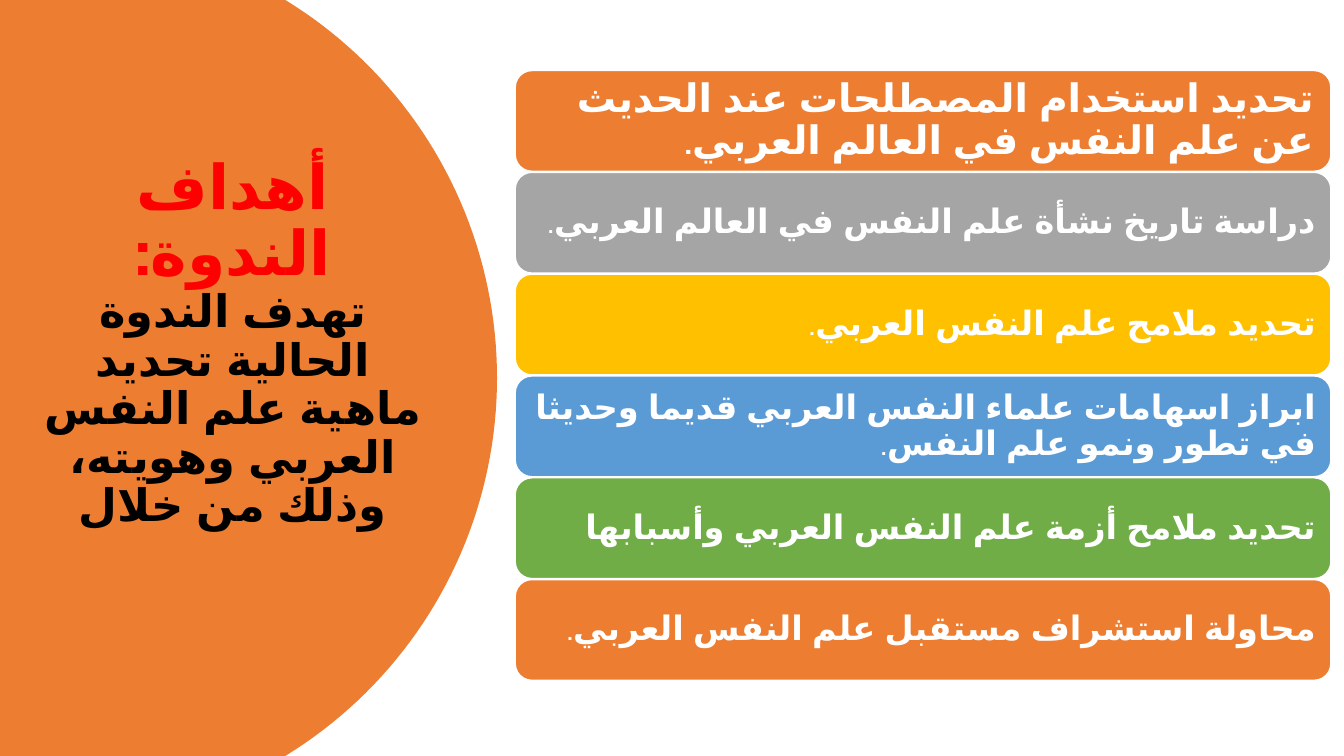
from math import asin, cos, sin

from pptx import Presentation
from pptx.dml.color import RGBColor
from pptx.enum.lang import MSO_LANGUAGE_ID as Language
from pptx.enum.shapes import MSO_SHAPE as Shape
from pptx.enum.text import MSO_ANCHOR as Anchor, MSO_AUTO_SIZE as AutoSize, PP_ALIGN as Align
from pptx.util import Inches, Pt

HEADING = "أهداف الندوة:"
INTRO = "تهدف الندوة الحالية تحديد ماهية علم النفس العربي وهويته، وذلك من خلال"
# goal, closing mark, bar colour
GOALS = [
    ("تحديد استخدام المصطلحات عند الحديث عن علم النفس في العالم العربي", ".", "orange"),
    ("دراسة تاريخ نشأة علم النفس في العالم العربي", ".", "grey"),
    ("تحديد ملامح علم النفس العربي", ".", "gold"),
    ("ابراز اسهامات علماء النفس العربي قديما وحديثا في تطور ونمو علم النفس", ".", "blue"),
    ("تحديد ملامح أزمة علم النفس العربي وأسبابها", "", "green"),
    ("محاولة استشراف مستقبل علم النفس العربي", ".", "orange"),
]


class Theme:
    font = "Calibri"
    colours = {
        "orange": "ED7D31", "grey": "A5A5A5", "gold": "FFC000", "blue": "5B9BD5",
        "green": "70AD47", "white": "FFFFFF", "red": "FF0000", "black": "000000",
    }
    heading, intro, lead_goal, goal, mark = 44, 32, 28, 24, 20

    @classmethod
    def rgb(cls, name):
        return RGBColor.from_string(cls.colours[name])


WIDTH, HEIGHT = 13.33, 7.5
PANEL_EDGE, PANEL_TOP = 4.93, 2.83  # reach of the arc at mid-height and at the slide's edges
ARC_STEPS = 80
BARS_LEFT, BARS_TOP, BAR_WIDTH, BAR_HEIGHT, BAR_PITCH = 5.11, 0.7, 8.09, 1, 1.01


def format_frame(frame, margins):
    values = {"word_wrap": True, "auto_size": AutoSize.NONE, "vertical_anchor": Anchor.MIDDLE}
    for name, value in values.items():
        setattr(frame, name, value)
    for side, margin in zip(("left", "top", "right", "bottom"), margins):
        setattr(frame, f"margin_{side}", Inches(margin))


def start_rtl(frame, alignment):
    paragraph = frame.paragraphs[0]
    paragraph.alignment = alignment
    paragraph.line_spacing = 0.9
    paragraph._p.get_or_add_pPr().set("rtl", "1")
    return paragraph


def add_run(paragraph, words, size, colour, bold=True):
    run = paragraph.add_run()
    run.text = words
    values = {"size": Pt(size), "bold": bold, "name": Theme.font,
              "language_id": Language.ARABIC}
    for name, value in values.items():
        setattr(run.font, name, value)
    run.font.color.rgb = Theme.rgb(colour)


def add_panel(slide):
    """Draw the part of a large disc that shows at the slide's left side."""
    half, reach = HEIGHT / 2, PANEL_EDGE - PANEL_TOP
    radius = (reach ** 2 + half ** 2) / (2 * reach)
    centre, swing = PANEL_EDGE - radius, asin(half / radius)
    angles = [swing * (2 * step / ARC_STEPS - 1) for step in range(ARC_STEPS + 1)]
    arc = [(Inches(centre + radius * cos(a)), Inches(half + radius * sin(a))) for a in angles]
    builder = slide.shapes.build_freeform(0, 0)
    builder.add_line_segments(arc + [(0, Inches(HEIGHT))], close=True)
    panel = builder.convert_to_shape()
    panel.shadow.inherit = False
    panel.fill.solid()
    panel.fill.fore_color.rgb = Theme.rgb("orange")
    panel.line.fill.background()


def fill_title(slide):
    title = slide.shapes.title
    place = {"left": 0.28, "top": 0.7, "width": 4.06, "height": 6.09}
    for name, value in place.items():
        setattr(title, name, Inches(value))
    format_frame(title.text_frame, (0.1, 0.05, 0.1, 0.72))
    paragraph = start_rtl(title.text_frame, Align.CENTER)
    add_run(paragraph, HEADING, Theme.heading, "red")
    paragraph.add_line_break()
    add_run(paragraph, INTRO, Theme.intro, "black")


def add_goal(slide, row, goal, mark, colour):
    bar = slide.shapes.add_shape(
        Shape.ROUNDED_RECTANGLE, Inches(BARS_LEFT), Inches(BARS_TOP + row * BAR_PITCH),
        Inches(BAR_WIDTH), Inches(BAR_HEIGHT))
    bar.shadow.inherit = False
    bar.fill.solid()
    bar.fill.fore_color.rgb = Theme.rgb(colour)
    bar.line.color.rgb = Theme.rgb("white")
    bar.line.width = Pt(1)
    leads = row == 0
    format_frame(bar.text_frame, [0.12 if leads else 0.1] * 4)
    paragraph = start_rtl(bar.text_frame, Align.RIGHT)
    add_run(paragraph, goal, Theme.lead_goal if leads else Theme.goal, "white")
    if mark:
        add_run(paragraph, mark, Theme.mark, "white", bold=leads)


def main():
    deck = Presentation()
    deck.slide_width, deck.slide_height = Inches(WIDTH), Inches(HEIGHT)
    slide = deck.slides.add_slide(deck.slide_layouts.get_by_name("Title Only"))
    add_panel(slide)
    fill_title(slide)
    tree = slide.shapes._spTree
    tree.append(slide.shapes.title._element)  # bring the title in front of the panel
    for row, goal in enumerate(GOALS):
        add_goal(slide, row, *goal)
    deck.save("out.pptx")


if __name__ == "__main__":
    main()
